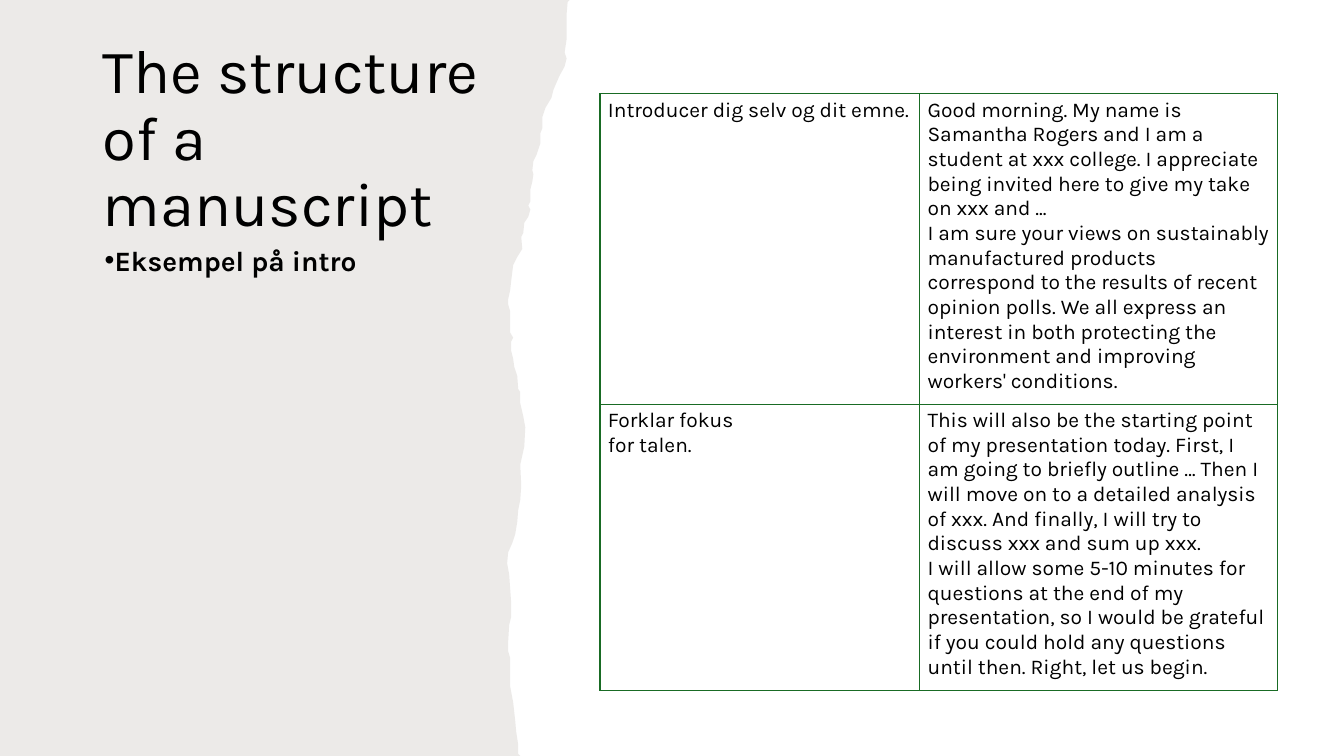
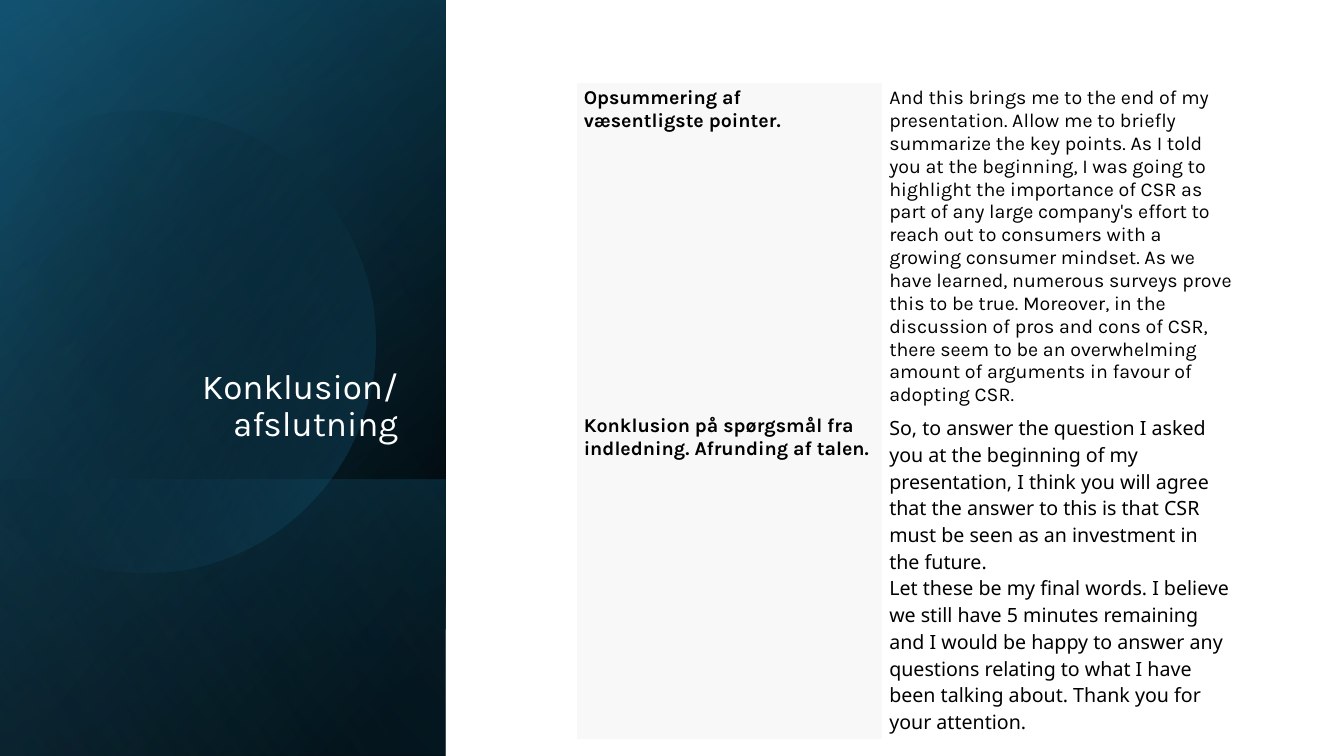
from dataclasses import dataclass
from math import acos, cos, pi, sin

from pptx import Presentation
from pptx.dml.color import RGBColor
from pptx.enum.shapes import MSO_SHAPE as Preset
from pptx.enum.text import MSO_ANCHOR as Anchor, MSO_AUTO_SIZE as AutoSize, PP_ALIGN as Align
from pptx.oxml import parse_xml
from pptx.oxml.ns import nsdecls, qn
from pptx.util import Inches, Pt

COLORS = {
    "ink": "000000",
    "white": "FFFFFF",
    "paper": "82766A",
    "border": "196B24",
    "label": "F8F8F8",
    "navy": "104862",
    "teal": "156082",
    "sky": "46B1E1",
}
FONT = "Karla"
SECOND_FONT = "Noto Sans"
HARD_SPACE = chr(160)

# Right-hand outline of the torn paper, top to bottom
TORN_EDGE = [
    (5.65, 0), (5.63, 0.02), (5.62, 0.14), (5.62, 0.39), (5.6, 0.52), (5.62, 0.58),
    (5.6, 0.66), (5.55, 0.75), (5.52, 0.82), (5.49, 0.89), (5.47, 0.97), (5.41, 1.07),
    (5.38, 1.16), (5.38, 1.27), (5.36, 1.32), (5.36, 1.42), (5.32, 1.54), (5.29, 1.6),
    (5.28, 1.69), (5.29, 1.73), (5.28, 1.8), (5.26, 1.88), (5.26, 2), (5.24, 2.04),
    (5.26, 2.08), (5.24, 2.15), (5.2, 2.21), (5.19, 2.31), (5.17, 2.35), (5.18, 2.47),
    (5.13, 2.55), (5.09, 2.63), (5.07, 2.79), (5.06, 2.88), (5.04, 2.97), (5.04, 3.02),
    (5.06, 3.09), (5.06, 3.26), (5.06, 3.3), (5.09, 3.35), (5.07, 3.39), (5.07, 3.48),
    (5.09, 3.56), (5.1, 3.64), (5.13, 3.73), (5.14, 3.86), (5.16, 3.89), (5.16, 4),
    (5.19, 4.13), (5.21, 4.24), (5.2, 4.43), (5.16, 4.61), (5.17, 4.82), (5.16, 4.96),
    (5.14, 5.06), (5.13, 5.18), (5.11, 5.3), (5.08, 5.39), (5.04, 5.48), (5.03, 5.59),
    (5.05, 5.7), (5.07, 5.98), (5.07, 6.12), (5.05, 6.2), (5.04, 6.37), (5.04, 6.46),
    (5.06, 6.53), (5.06, 6.81), (5.09, 6.97), (5.11, 7.15), (5.12, 7.26), (5.14, 7.39),
    (5.14, 7.48), (5.16, 7.5),
]


@dataclass
class Box:
    left: float
    top: float
    width: float
    height: float

    def lengths(self) -> list:
        return [Inches(v) for v in (self.left, self.top, self.width, self.height)]


@dataclass
class Stop:
    position: int
    color: str
    opacity: int = 100


@dataclass
class Layer:
    box: Box
    angle: int
    stops: list[Stop]


@dataclass
class TextStyle:
    size: float
    color: str = "ink"
    font: str = FONT
    bold: bool = False


@dataclass
class Cell:
    paragraphs: list[str]
    style: TextStyle
    fill: str | None = None


@dataclass
class Script:
    box: Box
    columns: list[float]
    row_heights: list[float]
    side_margin: float
    cells: list[list[Cell]]
    border: str | None = None


# Shared drawing functions
def rgb(name: str) -> RGBColor:
    return RGBColor.from_string(COLORS[name])


def add_text(paragraph, text: str, style: TextStyle) -> None:
    for number, line in enumerate(text.split("\n")):
        if number:
            paragraph.add_line_break()
        run = paragraph.add_run()
        run.text = line
        run.font.name = style.font
        run.font.size = Pt(style.size)
        run.font.bold = style.bold
        run.font.color.rgb = rgb(style.color)


def set_title(slide, text: str, box: Box, style: TextStyle, anchor, align) -> None:
    title = slide.shapes.title
    title.left, title.top, title.width, title.height = box.lengths()
    frame = title.text_frame
    frame.word_wrap = True
    frame.auto_size = AutoSize.NONE
    frame.vertical_anchor = anchor
    paragraph = frame.paragraphs[0]
    paragraph.alignment = align
    paragraph.line_spacing = 0.9
    add_text(paragraph, text, style)


def add_outline(slide, points: list[tuple[float, float]]):
    corners = [(Inches(x), Inches(y)) for x, y in points]
    builder = slide.shapes.build_freeform(*corners[0], scale=1.0)
    builder.add_line_segments(corners[1:], close=True)
    outline = builder.convert_to_shape()
    outline.shadow.inherit = False
    outline.line.fill.background()
    return outline


def set_gradient(shape, stops: list[Stop], angle: int) -> None:
    marks = "".join(
        f'<a:gs pos="{s.position * 1000}"><a:srgbClr val="{COLORS[s.color]}">'
        f'<a:alpha val="{s.opacity * 1000}"/></a:srgbClr></a:gs>'
        for s in stops
    )
    shape.fill.gradient()
    properties = shape.element.spPr
    properties.replace(properties.find(qn("a:gradFill")), parse_xml(
        f'<a:gradFill {nsdecls("a")} rotWithShape="1"><a:gsLst>{marks}</a:gsLst>'
        f'<a:lin ang="{angle * 60000}" scaled="0"/></a:gradFill>'
    ))


def add_layer(slide, layer: Layer) -> None:
    panel = slide.shapes.add_shape(Preset.RECTANGLE, *layer.box.lengths())
    panel.rotation = 90
    panel.element.spPr.xfrm.set("flipH", "1")
    panel.shadow.inherit = False
    panel.line.fill.background()
    set_gradient(panel, layer.stops, layer.angle)


def set_borders(cell, color: str | None) -> None:
    paint = (f'<a:solidFill><a:srgbClr val="{COLORS[color]}"/></a:solidFill>'
             if color else "<a:noFill/>")
    properties = cell._tc.get_or_add_tcPr()
    for side in ("lnL", "lnR", "lnT", "lnB"):
        properties.append(parse_xml(
            f'<a:{side} {nsdecls("a")} w="{Pt(1)}">{paint}</a:{side}>'))


def add_script(slide, script: Script) -> None:
    table = slide.shapes.add_table(
        len(script.row_heights), len(script.columns), *script.box.lengths()).table
    table.first_row = table.horz_banding = False
    for column, width in zip(table.columns, script.columns):
        column.width = Inches(width)
    for row, height, contents in zip(table.rows, script.row_heights, script.cells):
        row.height = Inches(height)
        for cell, content in zip(row.cells, contents):
            cell.margin_left = cell.margin_right = Inches(script.side_margin)
            cell.margin_top = cell.margin_bottom = Inches(0.04)
            set_borders(cell, script.border)
            if content.fill:
                cell.fill.solid()
                cell.fill.fore_color.rgb = rgb(content.fill)
            else:
                cell.fill.background()
            frame = cell.text_frame
            for number, text in enumerate(content.paragraphs):
                paragraph = frame.add_paragraph() if number else frame.paragraphs[0]
                add_text(paragraph, text, content.style)


# Slide 1: introduction
def build_intro(slide) -> None:
    paper = add_outline(slide, [(0, 0), *TORN_EDGE, (0, 7.5)])
    paper.fill.solid()
    paper.fill.fore_color.rgb = rgb("paper")
    paper.element.spPr.find(".//" + qn("a:srgbClr")).append(
        parse_xml(f'<a:alpha {nsdecls("a")} val="15000"/>'))

    set_title(slide, "The structure of a manuscript", Box(0.92, 0.66, 4.09, 1.46),
              TextStyle(44), Anchor.MIDDLE, Align.LEFT)

    subtitle = slide.shapes.add_textbox(*Box(0.94, 2.4, 3.75, 4.27).lengths()).text_frame
    subtitle.word_wrap = True
    example = subtitle.paragraphs[0]
    example.line_spacing = 0.9
    example.space_after = Pt(6)
    indents = example._p.get_or_add_pPr()
    indents.set("marL", "0")
    indents.set("indent", str(Inches(-0.25)))
    indents.append(parse_xml(f'<a:buFont {nsdecls("a")} typeface="Arial"/>'))
    indents.append(parse_xml(f'<a:buChar {nsdecls("a")} char="•"/>'))
    add_text(example, "Eksempel på intro", TextStyle(20, bold=True))

    body = TextStyle(15)
    add_script(slide, Script(
        Box(5.95, 0.93, 6.72, 5.68), [3.17, 3.55], [2.84, 2.84], 0.08,
        [
            [Cell(["Introducer dig selv og dit emne."], body),
             Cell(["Good morning. My name is Samantha Rogers and I am a student at xxx "
                   "college. I appreciate being invited here to give my take on xxx and ...",
                   f"I am sure your views on{HARD_SPACE}sustainably manufactured products "
                   "correspond to the results of recent opinion polls. We all express an "
                   "interest in both protecting the environment and improving workers' "
                   "conditions."], body)],
            [Cell(["Forklar fokus\nfor talen."], body),
             Cell(["This will also be the starting point of my presentation today. First, I "
                   "am going to briefly outline … Then I will move on to a detailed analysis "
                   "of xxx. And finally, I will try to discuss xxx and sum up xxx.",
                   "I will allow some 5-10 minutes for questions at the end of my "
                   "presentation, so I would be grateful if you could hold any questions "
                   "until then. Right, let us begin."], body)],
        ], "border"))


# Slide 2: conclusion
def build_conclusion(slide) -> None:
    side = Box(-1.54, 1.54, 7.5, 4.42)
    for layer in (
        Layer(side, 50, [Stop(8, "ink"), Stop(100, "navy")]),
        Layer(side, 30, [Stop(0, "ink", 0), Stop(99, "teal", 46)]),
        Layer(Box(0.84, 3.92, 2.74, 4.42), 130, [Stop(2, "teal", 29), Stop(100, "ink", 30)]),
    ):
        add_layer(slide, layer)

    # Disc cut off by the left edge of the slide
    center_x, center_y, radius, steps = 1.43, 3.39, 2.29, 90
    reach = pi - acos(center_x / radius)
    angles = [reach * (2 * step / steps - 1) for step in range(steps + 1)]
    disc = add_outline(slide, [
        (center_x + radius * cos(a), center_y + radius * sin(a)) for a in angles])
    set_gradient(disc, [Stop(10, "ink", 0), Stop(100, "teal", 43)], 30)

    add_layer(slide, Layer(side, 120, [Stop(0, "ink", 0), Stop(99, "sky", 11)]))

    set_title(slide, "Konklusion/afslutning", Box(0.64, 1.84, 3.41, 2.62),
              TextStyle(25, "white"), Anchor.BOTTOM, Align.RIGHT)

    label = TextStyle(14, bold=True)
    add_script(slide, Script(
        Box(5.72, 0.82, 6.58, 5.97), [3.03, 3.55], [3.1, 2.87], 0.07,
        [
            [Cell([f"Opsummering{HARD_SPACE}af væsentligste{HARD_SPACE}pointer."],
                  label, "label"),
             Cell(["And this brings me to the end of my presentation. Allow me to briefly "
                   "summarize the key points. As I told you at the beginning, I was going to "
                   "highlight the importance of CSR as part of any large company's effort to "
                   "reach out to consumers with a growing consumer mindset. As we have "
                   "learned, numerous surveys prove this to be true. Moreover, in the "
                   "discussion of pros and cons of CSR, there seem to be an overwhelming "
                   "amount of arguments in favour of adopting CSR."], TextStyle(14), "white")],
            [Cell(["Konklusion på spørgsmål fra indledning. Afrunding af talen."],
                  label, "label"),
             Cell(["So, to answer the question I asked you at the beginning of my "
                   "presentation, I think you will agree that the answer to this is that CSR "
                   "must be seen as an investment in the future.",
                   "Let these be my final words. I believe we still have 5 minutes remaining "
                   "and I would be happy to answer any questions relating to what I have been "
                   "talking about. Thank you for your attention."],
                  TextStyle(14, font=SECOND_FONT), "white")],
        ]))


def main() -> None:
    deck = Presentation()
    deck.slide_width, deck.slide_height = Inches(13.33), Inches(7.5)
    title_only = deck.slide_layouts[5]
    for build in (build_intro, build_conclusion):
        slide = deck.slides.add_slide(title_only)
        # Keep the title above the shapes drawn after it
        title = slide.shapes.title.element
        build(slide)
        tree = title.getparent()
        tree.remove(title)
        tree.append(title)
    deck.save("out.pptx")


if __name__ == "__main__":
    main()
